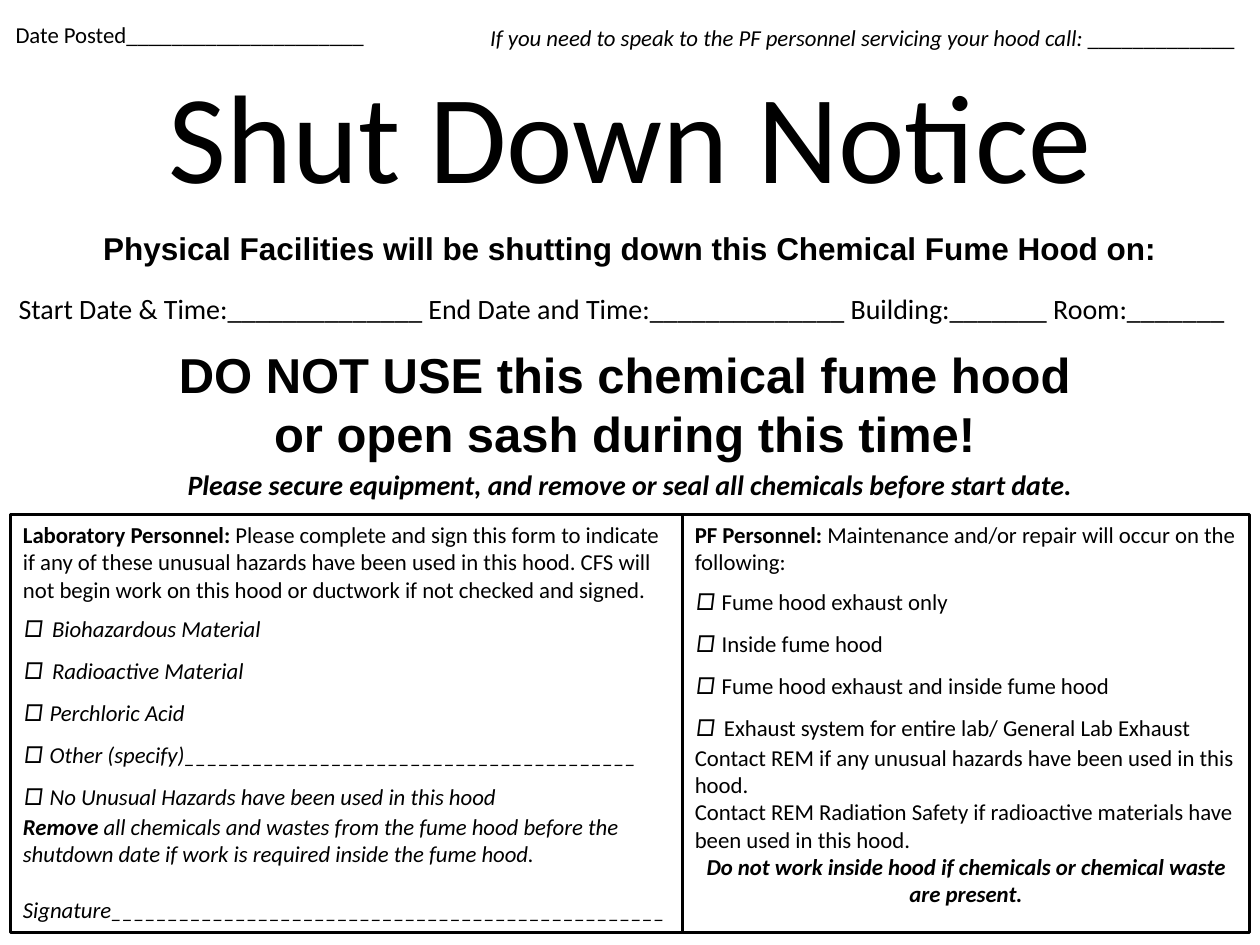
from pptx import Presentation
from pptx.dml.color import RGBColor
from pptx.enum.shapes import MSO_SHAPE
from pptx.enum.text import MSO_ANCHOR, PP_ALIGN
from pptx.util import Inches, Pt

COLORS = {"ink": "000000", "paper": "FFFFFF"}
COLUMNS, ROWS = 120, 90
SMALL, MEDIUM = 13, 16


def text(words, size=SMALL, font="Calibri", bold=False, italic=False, color="ink"):
    """Return a writer that adds these words to a paragraph as one run."""
    def write(paragraph):
        run = paragraph.add_run()
        run.text = words
        run.font.size = Pt(size)
        run.font.name = font
        run.font.bold = bold
        run.font.italic = italic
        run.font.color.rgb = RGBColor.from_string(COLORS[color])
    return write


def checkbox(label, italic=False, gap=14):
    """Return the runs of one line with a box to tick."""
    return [text("□", 20, italic=True), text(" ", gap, italic=True),
            text(label, italic=italic)]


class NoticeBuilder:
    def __init__(self, presentation):
        self.cell_width = presentation.slide_width / COLUMNS
        self.cell_height = presentation.slide_height / ROWS
        self.slide = presentation.slides.add_slide(presentation.slide_layouts[6])

    def place(self, column, row, width, height):
        return (round(column * self.cell_width), round(row * self.cell_height),
                round(width * self.cell_width), round(height * self.cell_height))

    def fill_text(self, shape, paragraphs, align, anchor):
        frame = shape.text_frame
        frame.word_wrap = True
        frame.vertical_anchor = anchor
        for index, runs in enumerate(paragraphs):
            paragraph = frame.add_paragraph() if index else frame.paragraphs[0]
            paragraph.alignment = align
            for write in runs:
                write(paragraph)
        return frame.paragraphs

    def line(self, area, *runs, align=PP_ALIGN.LEFT, anchor=MSO_ANCHOR.TOP):
        shape = self.slide.shapes.add_textbox(*self.place(*area))
        self.fill_text(shape, [runs], align, anchor)

    def panel(self, area, paragraphs):
        shape = self.slide.shapes.add_shape(MSO_SHAPE.RECTANGLE, *self.place(*area))
        shape.shadow.inherit = False
        shape.fill.background()
        shape.line.color.rgb = RGBColor.from_string(COLORS["ink"])
        shape.line.width = Pt(2)
        return self.fill_text(shape, paragraphs, PP_ALIGN.LEFT, MSO_ANCHOR.TOP)


def main():
    presentation = Presentation()
    presentation.slide_width, presentation.slide_height = Inches(10), Inches(7.5)
    notice = NoticeBuilder(presentation)
    center = PP_ALIGN.CENTER

    # Top line
    notice.line((0.3, 1.4, 60, 3.8), text("Date Posted" + "_" * 21))
    notice.line((45.5, 1.7, 74.5, 3.8),
                text("If you need to speak to the PF personnel servicing your hood call: ",
                     italic=True),
                text("_" * 13))

    # Headings and dates
    notice.line((9, 3, 102, 19.3), text("Shut Down Notice", 72),
                align=center, anchor=MSO_ANCHOR.MIDDLE)
    notice.line((6, 21.2, 108, 6),
                text("Physical Facilities will be shutting down this Chemical Fume Hood on:",
                     18, "Arial", bold=True), align=center)
    blanks = [("Start Date & Time:", 14), ("End Date and Time:", 14),
              ("Building:", 7), ("Room:", 7)]
    notice.line((0.6, 27.2, 119, 4.5),
                text(" ".join(label + "_" * count for label, count in blanks), MEDIUM))
    notice.line((14, 32.2, 91, 12.5),
                text("DO NOT USE this chemical fume hood or open sash during this time!",
                     28, "Arial", bold=True), align=center)
    notice.line((10, 43.9, 100, 4),
                text("Please secure equipment, and remove or seal all chemicals "
                     "before start date.", MEDIUM, bold=True, italic=True), align=center)

    # Laboratory panel
    laboratory = notice.panel((1, 49, 64, 39.8), [
        [text("Laboratory Personnel: ", bold=True),
         text("Please complete and sign this form to indicate if any of these unusual "
              "hazards have been used in this hood. CFS will not begin work on this "
              "hood or ductwork if not checked and signed.")],
        checkbox("Biohazardous Material", italic=True, gap=20),
        checkbox("Radioactive Material", italic=True, gap=20),
        checkbox("Perchloric Acid", italic=True),
        checkbox("Other (specify)" + "_" * 40, italic=True),
        checkbox("No Unusual Hazards have been used in this hood", italic=True),
        [text("Remove ", bold=True, italic=True),
         text("all chemicals and wastes from the fume hood before the shutdown date "
              "if work is required inside the fume hood.", italic=True)],
        [text("Signature" + "_" * 49, italic=True)],
    ])
    laboratory[-1].space_before = Pt(16)

    # Facilities panel
    facilities = notice.panel((65, 49, 54, 39.8), [
        [text("PF Personnel:", bold=True),
         text(" Maintenance and/or repair will occur on the following:")],
        checkbox("Fume hood exhaust only"),
        checkbox("Inside fume hood"),
        checkbox("Fume hood exhaust and inside fume hood"),
        checkbox("Exhaust system for entire lab/ General Lab Exhaust", gap=20),
        [text("Contact REM if any unusual hazards have been used in this hood.")],
        [text("Contact REM Radiation Safety if radioactive materials have been used "
              "in this hood.")],
        [text("Do not work inside hood if chemicals or chemical waste are present.",
              bold=True, italic=True)],
    ])
    facilities[-1].alignment = center

    presentation.save("out.pptx")


if __name__ == "__main__":
    main()
